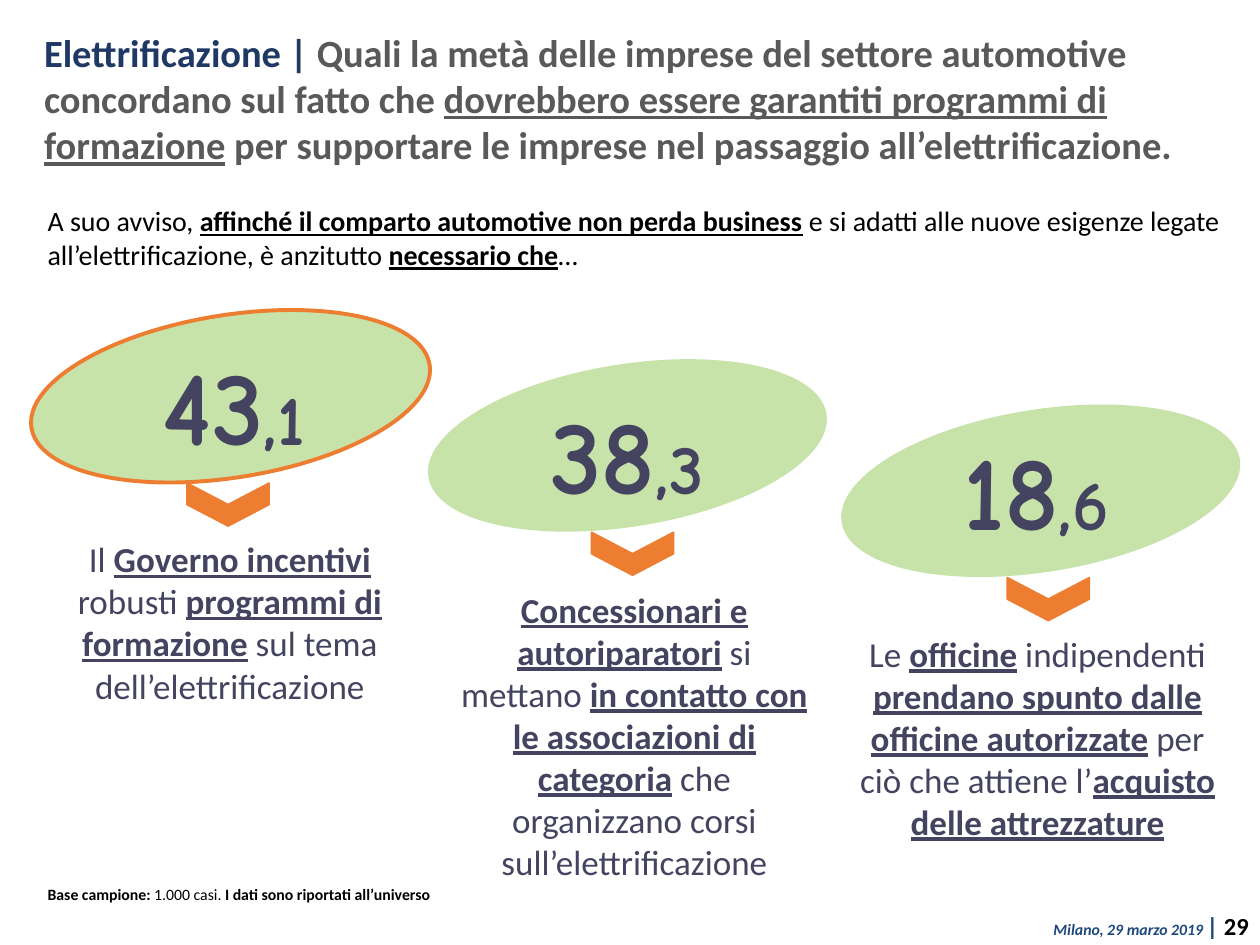
"""Builds the slide on training programmes for electrification."""
from lxml import etree
from pptx import Presentation
from pptx import util as u
from pptx.dml.color import RGBColor
from pptx.enum import shapes, text
from pptx.oxml.ns import qn

ORANGE, GREEN, SLATE, GREY, NAVY, BLUE, BLACK = (
    "ED7D31", "7ABC32", "444460", "595959", "203864", "1F497D", "000000")
LEFT, CENTER, RIGHT, JUSTIFY = (
    text.PP_ALIGN.LEFT, text.PP_ALIGN.CENTER, text.PP_ALIGN.RIGHT, text.PP_ALIGN.JUSTIFY)

# Each run is (text, flags, size, colour); flags are b(old), i(talic), u(nderline).
TITLE = [
    ("Elettrificazione | ", "b", 22, NAVY),
    ("Quali la metà delle imprese del settore automotive concordano sul fatto che ", "b", 22, GREY),
    ("dovrebbero essere garantiti programmi di formazione", "bu", 22, GREY),
    (" per supportare le imprese nel passaggio all’elettrificazione.", "b", 22, GREY),
]
QUESTION = ("A suo avviso, *affinché il comparto automotive non perda business* e si adatti "
            "alle nuove esigenze legate all’elettrificazione, è anzitutto *necessario che*…")
BASE = [
    ("Base campione: ", "b", 9, BLACK),
    ("1.000 casi. ", "", 9, BLACK),
    ("I dati sono riportati all’universo", "b", 9, BLACK),
]
FOOTER = [
    ("Milano, 29 marzo 2019 ", "bi", 9, BLUE),
    ("| ", "b", 14, BLUE),
    ("29", "b", 14, BLACK),
]
ANSWERS = [
    dict(value=("43", ",1"), oval=(0.23, 2.5), number=(0.6, 2.65), chevron=(1.64, 3.68),
         label=(0.31, 4.22, 3.03, 1.45), outline=ORANGE,
         words="Il *Governo incentivi *robusti *programmi di formazione* sul tema "
               "dell’elettrificazione"),
    dict(value=("38", ",3"), oval=(3.38, 2.89), number=(3.72, 3.04), chevron=(4.85, 4.07),
         label=(3.52, 4.62, 3.03, 2.46), outline=None,
         words="*Concessionari e autoriparatori* si mettano *in contatto con le associazioni "
               "di categoria* che organizzano corsi sull’elettrificazione"),
    dict(value=("18", ",6"), oval=(6.66, 3.25), number=(6.97, 3.33), chevron=(8.15, 4.43),
         label=(6.72, 4.97, 3.03, 1.78), outline=None,
         words="Le *officine* indipendenti *prendano spunto dalle officine autorizzate* per "
               "ciò che attiene l’*acquisto delle attrezzature*"),
]
OVAL, NUMBER, CHEVRON = (3.2, 1.29), (2.51, 1.11), (0.34, 0.65)


def rgb(value):
    return RGBColor.from_string(value)


def emphasise(marked, size, color):
    return [(part, "bu" if i % 2 else "", size, color)
            for i, part in enumerate(marked.split("*")) if part]


def add_text(s, box, runs, align=LEFT, font="Calibri", inset=(0.1, 0.05), spacing=None):
    tf = s.shapes.add_textbox(*map(u.Inches, box)).text_frame
    tf.word_wrap = True
    tf.margin_left = tf.margin_right = u.Inches(inset[0])
    tf.margin_top = tf.margin_bottom = u.Inches(inset[1])
    p = tf.paragraphs[0]
    p.alignment = align
    p.font.name = font
    if spacing:
        p.line_spacing = spacing
    for words, flags, size, color in runs:
        r = p.add_run()
        r.text = words
        r.font.name = font
        r.font.size = u.Pt(size)
        r.font.color.rgb = rgb(color)
        r.font.bold = "b" in flags
        r.font.italic = "i" in flags
        r.font.underline = "u" in flags


def add_shape(s, kind, box, rotation, fill, line=None, width=1, opacity=None):
    sp = s.shapes.add_shape(kind, *map(u.Inches, box))
    sp.rotation = rotation
    sp.shadow.inherit = False
    sp.fill.solid()
    sp.fill.fore_color.rgb = rgb(fill)
    if opacity:
        color = sp._element.spPr.find(qn("a:solidFill")).find(qn("a:srgbClr"))
        etree.SubElement(color, qn("a:alpha")).set("val", str(opacity * 1000))
    if line:
        sp.line.color.rgb = rgb(line)
        sp.line.width = u.Pt(width)
    else:
        sp.line.fill.background()


def main():
    prs = Presentation()
    prs.slide_width, prs.slide_height = u.Inches(10), u.Inches(7.5)
    s = prs.slides.add_slide(prs.slide_layouts[6])
    add_text(s, (3.08, 7.18, 6.93, 0.33), FOOTER, RIGHT)
    add_text(s, (0.28, 0.19, 9.71, 1.19), TITLE, inset=(0.07, 0.04))
    add_text(s, (0.28, 6.96, 9.48, 0.27), BASE, JUSTIFY, spacing=1.1)
    add_text(s, (0.28, 1.57, 9.66, 0.64), emphasise(QUESTION, 16, BLACK))
    for a in ANSWERS:
        add_shape(s, shapes.MSO_SHAPE.OVAL, a["oval"] + OVAL, 351, GREEN,
                  a["outline"], 2.25, 41)
        add_text(s, a["label"], emphasise(a["words"], 20, SLATE), CENTER)
        number = [(part, "b", size, SLATE) for part, size in zip(a["value"], (60, 40))]
        add_text(s, a["number"] + NUMBER, number, CENTER, "Comic Neue")
        add_shape(s, shapes.MSO_SHAPE.CHEVRON, a["chevron"] + CHEVRON, 90, ORANGE, ORANGE)
    prs.save("out.pptx")


if __name__ == "__main__":
    main()
